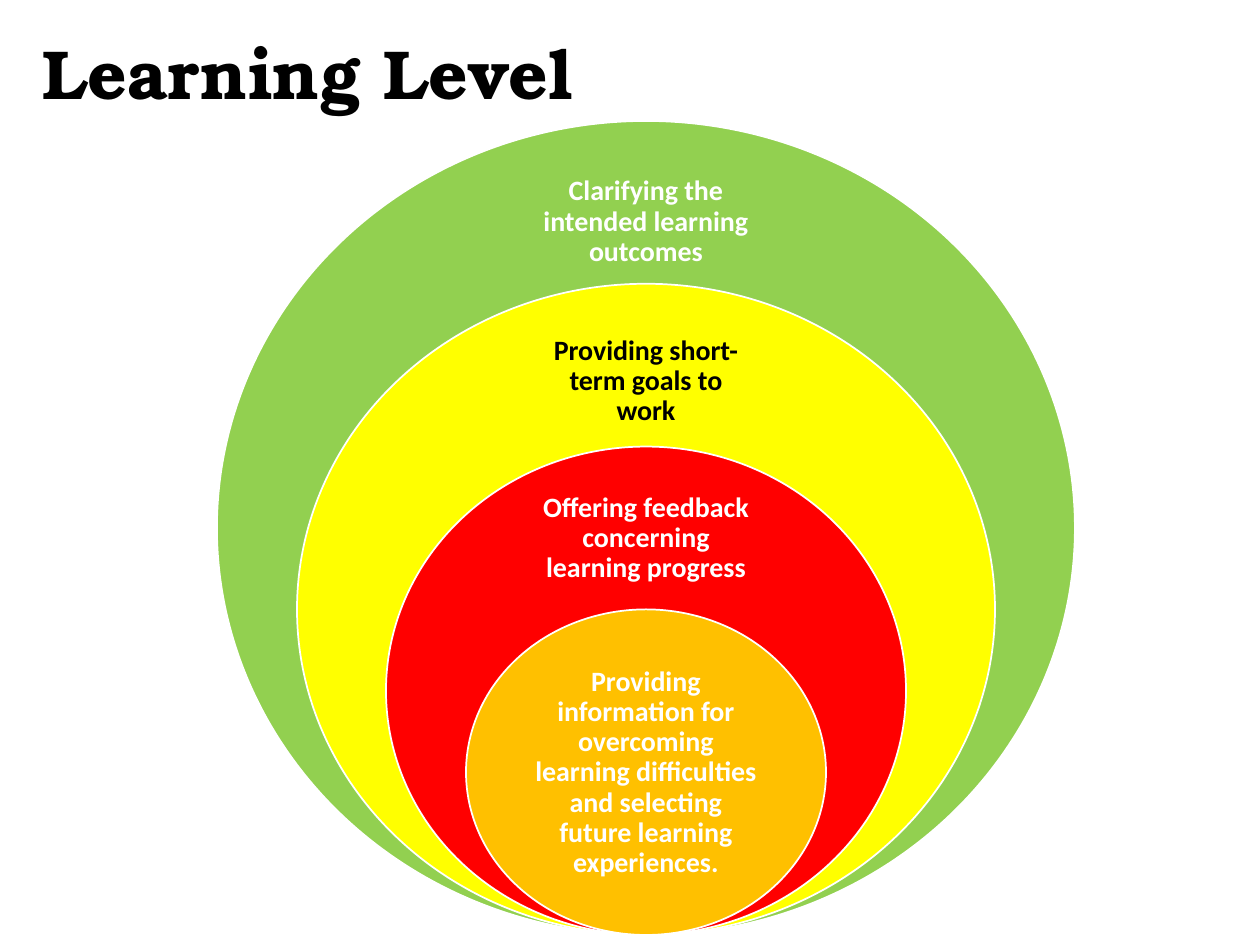
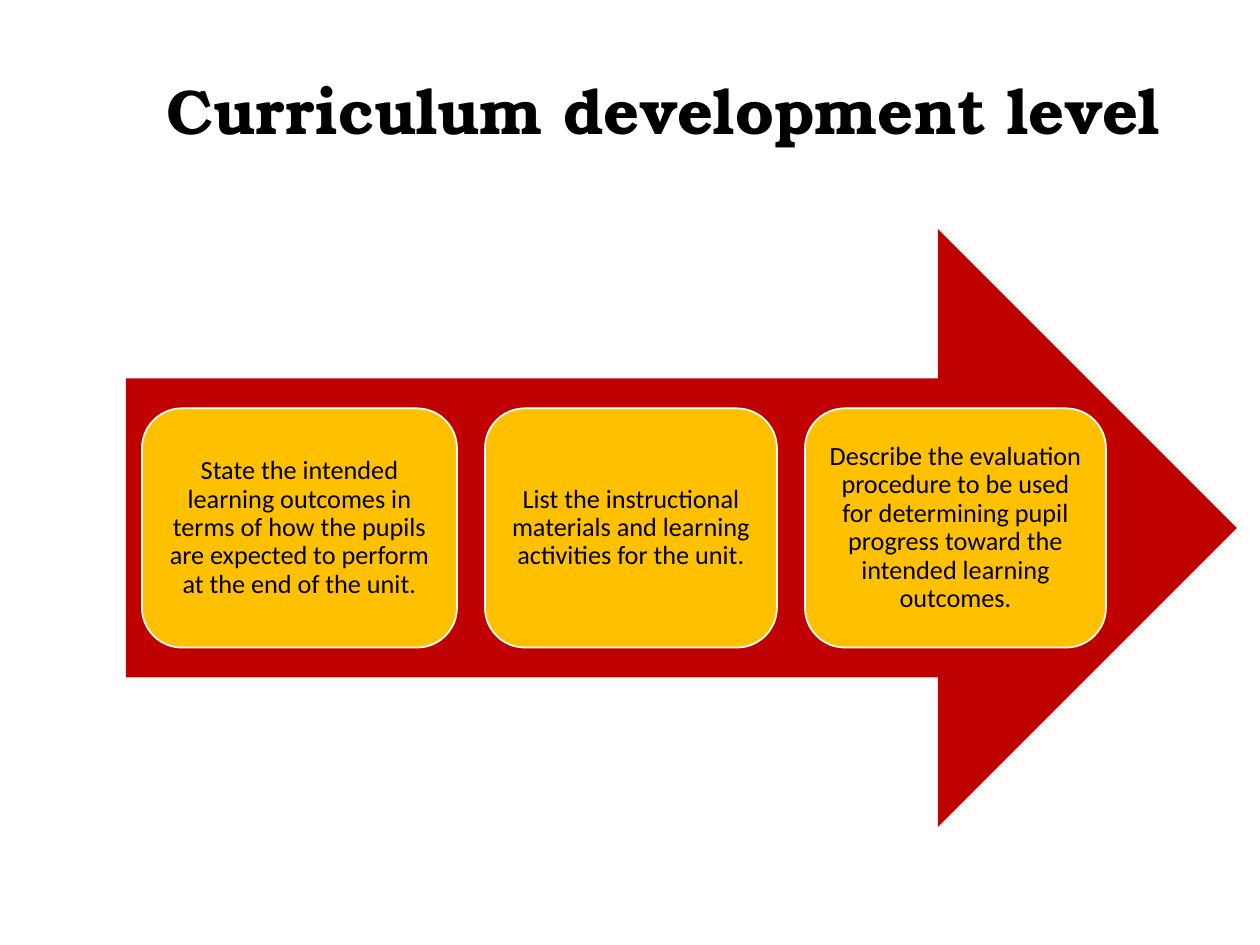
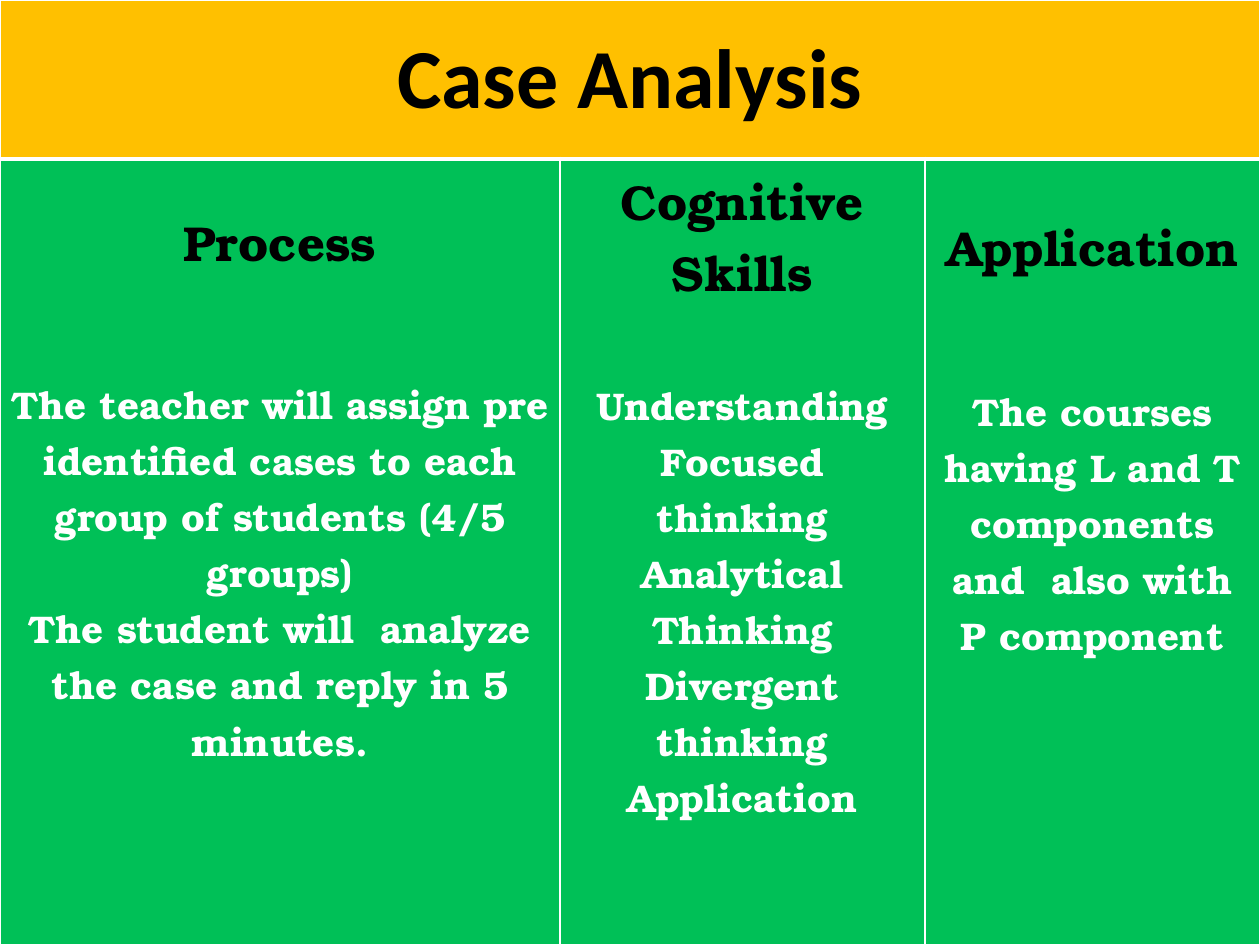
from lxml import etree
from pptx import Presentation
from pptx import util as u
from pptx.dml.color import RGBColor
from pptx.enum import shapes, text
from pptx.oxml import ns

EMU_PER_PX = 914400 / 126
SERIF, SANS = "TeX Gyre Bonum", "Calibri"
BLACK, WHITE, AMBER = "000000", "FFFFFF", "FFC000"
LIME, YELLOW, RED = "92D050", "FFFF00", "FF0000"
CRIMSON, GREEN = "C00000", "00C057"


def px(length):
    return u.Emu(round(length * EMU_PER_PX))


def color(value):
    return RGBColor.from_string(value)


def style_paragraph(paragraph, font_name, size, font_color, bold,
                    alignment=text.PP_ALIGN.CENTER, line_spacing=None):
    paragraph.alignment = alignment
    paragraph.line_spacing = line_spacing
    for run in paragraph.runs:
        run.font.name = font_name
        run.font.size = u.Pt(size)
        run.font.bold = bold
        run.font.color.rgb = color(font_color)


def fill_frame(shape, words, inset_x, inset_y, **style):
    frame = shape.text_frame
    frame.word_wrap = True
    frame.vertical_anchor = text.MSO_ANCHOR.MIDDLE
    frame.margin_left = frame.margin_right = px(inset_x)
    frame.margin_top = frame.margin_bottom = px(inset_y)
    frame.text = words
    style_paragraph(frame.paragraphs[0], line_spacing=0.9, **style)


def add_text(slide, box, words, inset_x, inset_y, **style):
    shape = slide.shapes.add_textbox(*map(px, box))
    fill_frame(shape, words, inset_x, inset_y, **style)


def add_title(slide, box, words, size):
    add_text(slide, box, words, 13, 6, font_name=SERIF, size=size,
             font_color=BLACK, bold=True, alignment=text.PP_ALIGN.LEFT)


def add_figure(slide, kind, box, fill, outlined=True):
    shape = slide.shapes.add_shape(kind, *map(px, box))
    shape.shadow.inherit = False
    shape.fill.solid()
    shape.fill.fore_color.rgb = color(fill)
    if outlined:
        shape.line.color.rgb = color(WHITE)
        shape.line.width = u.Pt(1)
    else:
        shape.line.fill.background()
    return shape


def add_nested_circles(slide, box, rings):
    left, top, width, height = box
    center = left + width / 2
    step = height / (len(rings) + 1)
    for index, (ring_width, fill, font_color, label_box, words) in enumerate(rings):
        ring_top = top + index * step
        add_figure(slide, shapes.MSO_SHAPE.OVAL,
                   (center - ring_width / 2, ring_top, ring_width, height - index * step), fill)
        offset, label_width, label_height = label_box
        add_text(slide, (center - label_width / 2, ring_top + offset, label_width, label_height),
                 words, 15, 15, font_name=SANS, size=16, font_color=font_color, bold=True)


def add_step_arrow(slide, box, steps):
    left, top, width, height = box
    add_figure(slide, shapes.MSO_SHAPE.RIGHT_ARROW, box, CRIMSON, outlined=False)
    card_left, gap, card_height = left + 16, 28, height * 0.4
    for card_width, words in steps:
        card = add_figure(slide, shapes.MSO_SHAPE.ROUNDED_RECTANGLE,
                          (card_left, top + (height - card_height) / 2, card_width, card_height), AMBER)
        fill_frame(card, words, 8, 8, font_name=SANS, size=15, font_color=BLACK, bold=False)
        card_left += card_width + gap


def style_cell(cell, fill, border_widths):
    properties = cell._tc.get_or_add_tcPr()
    for side, points in border_widths.items():
        line = etree.SubElement(properties, ns.qn(f"a:ln{side}"), w=str(u.Pt(points)))
        solid = etree.SubElement(line, ns.qn("a:solidFill"))
        etree.SubElement(solid, ns.qn("a:srgbClr"), val=WHITE)
    cell.fill.solid()
    cell.fill.fore_color.rgb = color(fill)
    cell.margin_left = cell.margin_right = px(10)
    cell.margin_top = cell.margin_bottom = px(5)


def fill_topic(cell, top_margin, heading, gap, lines):
    cell.margin_top = px(top_margin)
    frame = cell.text_frame
    frame.text = "\n".join([heading, *lines])
    first, *others = frame.paragraphs
    style_paragraph(first, SERIF, 28, BLACK, True)
    for paragraph in others:
        style_paragraph(paragraph, SERIF, 22, WHITE, True)
    others[0].space_before = px(gap)


def add_topic_table(slide, box, heading, topics):
    table = slide.shapes.add_table(2, len(topics), *map(px, box)).table
    header_height = 159
    table.rows[0].height = px(header_height)
    table.rows[1].height = px(box[3] - header_height)
    for index, (column_width, *topic) in enumerate(topics):
        table.columns[index].width = px(column_width)
        style_cell(table.cell(0, index), AMBER, {"L": 1, "R": 1, "T": 1, "B": 3})
        style_cell(table.cell(1, index), GREEN, {"L": 1, "R": 1, "T": 3, "B": 1})
        fill_topic(table.cell(1, index), *topic)
    header = table.cell(0, 0)
    header.merge(table.cell(0, len(topics) - 1))
    header.vertical_anchor = text.MSO_ANCHOR.MIDDLE
    header.text_frame.text = heading
    style_paragraph(header.text_frame.paragraphs[0], SANS, 48, BLACK, True)


def build_learning_level(slide):
    add_nested_circles(slide, (217, 121, 858, 814), [
        (858, LIME, WHITE, (40, 240, 122), "Clarifying the intended learning outcomes"),
        (698, YELLOW, BLACK, (39, 243, 117), "Providing short-term goals to work"),
        (520, RED, WHITE, (37, 243, 110), "Offering feedback concerning learning progress"),
        (360, AMBER, WHITE, (82, 254, 163),
         "Providing information for overcoming learning difficulties "
         "and selecting future learning experiences."),
    ])
    add_title(slide, (30, 20, 1086, 115), "Learning Level", 39.6)


def build_curriculum_level(slide):
    add_title(slide, (154, 15, 1036, 198), "Curriculum development level", 36)
    add_step_arrow(slide, (126, 229, 1111, 598), [
        (315, "State the intended learning outcomes in terms of how the pupils "
              "are expected to perform at the end of the unit."),
        (292, "List the instructional materials and learning activities for the unit."),
        (301, "Describe the evaluation procedure to be used for determining "
              "pupil progress toward the intended learning outcomes."),
    ])


def build_case_analysis(slide):
    add_topic_table(slide, (0, 0, 1260, 945), "Case Analysis", [
        (560, 46, "Process", 99,
         ["The teacher will assign pre identified cases to each group of students (4/5 groups)",
          "The student will  analyze the case and reply in 5 minutes."]),
        (365, 5, "Cognitive Skills", 69,
         ["Understanding", "Focused thinking", "Analytical Thinking",
          "Divergent thinking", "Application"]),
        (335, 51, "Application", 101,
         ["The courses having L and T components", "and  also with P component"]),
    ])


def main():
    presentation = Presentation()
    presentation.slide_width = px(1260)
    presentation.slide_height = px(945)
    blank = presentation.slide_layouts[6]
    for build in (build_learning_level, build_curriculum_level, build_case_analysis):
        build(presentation.slides.add_slide(blank))
    presentation.save("out.pptx")


if __name__ == "__main__":
    main()
